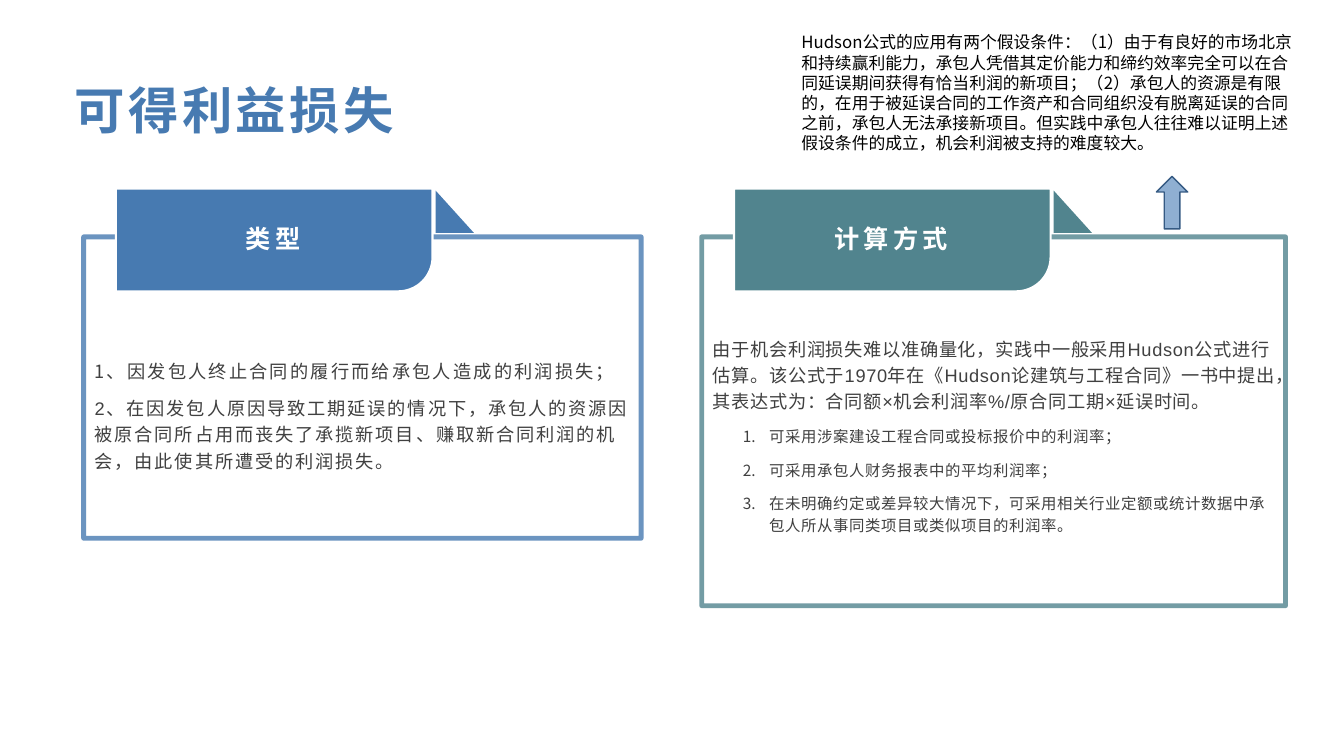
from dataclasses import dataclass
from math import cos, pi, sin

from lxml.etree import SubElement
from pptx import Presentation
from pptx.dml.color import RGBColor
from pptx.enum.shapes import MSO_SHAPE
from pptx.enum.text import MSO_ANCHOR, PP_ALIGN
from pptx.oxml.ns import qn
from pptx.util import Inches, Pt


@dataclass(frozen=True)
class Theme:
    # Colours
    blue: str = "477AB1"
    teal: str = "51848E"
    white: str = "FFFFFF"
    black: str = "000000"
    gray: str = "404040"
    arrow_fill: str = "8FAFD2"
    arrow_line: str = "355A83"
    # Fonts and type sizes
    latin: str = "Arial"
    chinese: str = "Noto Sans CJK SC"
    title: int = 36
    heading: int = 18
    body: int = 13
    note: int = 12
    item: int = 11


@dataclass
class Line:
    """One paragraph of text with its style."""
    text: str
    size: int
    color: str
    font: str
    tracking: float = 0
    bold: bool = False
    align: PP_ALIGN = PP_ALIGN.LEFT
    spacing: float | None = None
    after: float = 0
    numbered: bool = False


def cells(count):
    """Columns and rows are both a tenth of an inch."""
    return Inches(count / 10)


class SlideBuilder:
    def __init__(self, presentation, theme):
        self.theme = theme
        self.slide = presentation.slides.add_slide(presentation.slide_layouts[6])

    def paint(self, shape, fill=None, line=None, width=1, opacity=None):
        shape.shadow.inherit = False
        if fill:
            shape.fill.solid()
            shape.fill.fore_color.rgb = RGBColor.from_string(fill)
        else:
            shape.fill.background()
        if not line:
            shape.line.fill.background()
            return
        shape.line.color.rgb = RGBColor.from_string(line)
        shape.line.width = Pt(width)
        if opacity:
            color = shape.line._ln.find(".//" + qn("a:srgbClr"))
            SubElement(color, qn("a:alpha")).set("val", str(opacity * 1000))

    def shape(self, kind, box, **style):
        shape = self.slide.shapes.add_shape(kind, *map(cells, box))
        self.paint(shape, **style)

    def tab(self, left, top, width, height, radius, color):
        """A banner whose lower right corner is rounded."""
        right, bottom = left + width, top + height
        steps = 24
        arc = [(right - radius + radius * cos(step * pi / 2 / steps),
                bottom - radius + radius * sin(step * pi / 2 / steps))
               for step in range(steps + 1)]
        outline = [(right, top), *arc, (left, bottom)]
        builder = self.slide.shapes.build_freeform(cells(left), cells(top))
        builder.add_line_segments([(cells(x), cells(y)) for x, y in outline])
        self.paint(builder.convert_to_shape(), fill=color,
                   line=self.theme.white, width=1.5)

    def text(self, box, lines, anchor=MSO_ANCHOR.MIDDLE, insets=(1, 0.5)):
        frame = self.slide.shapes.add_textbox(*map(cells, box)).text_frame
        frame.word_wrap = True
        frame.vertical_anchor = anchor
        frame.margin_left = frame.margin_right = cells(insets[0])
        frame.margin_top = frame.margin_bottom = cells(insets[1])
        for index, line in enumerate(lines):
            paragraph = frame.add_paragraph() if index else frame.paragraphs[0]
            self.fill_paragraph(paragraph, line)

    def fill_paragraph(self, paragraph, line):
        if line.numbered:
            properties = paragraph._p.get_or_add_pPr()
            properties.set("marL", str(cells(5.6)))
            properties.set("indent", str(cells(-2.6)))
            SubElement(properties, qn("a:buAutoNum")).set("type", "arabicPeriod")
            paragraph.level = 1
        paragraph.alignment = line.align
        if line.spacing:
            paragraph.line_spacing = line.spacing
        paragraph.space_after = Pt(line.after)
        run = paragraph.add_run()
        run.text = line.text
        run.font.size = Pt(line.size)
        run.font.bold = line.bold
        run.font.name = line.font
        run.font.color.rgb = RGBColor.from_string(line.color)
        properties = run._r.get_or_add_rPr()
        properties.set("spc", str(round(line.tracking * 100)))
        SubElement(properties, qn("a:ea")).set("typeface", self.theme.chinese)

    def panel(self, left, width, height, color, heading, body_top, body_height, lines):
        """A framed text with a folded banner on its upper edge."""
        theme = self.theme
        self.shape(MSO_SHAPE.RECTANGLE, (left, 23.5, width, height),
                   line=color, width=3.5, opacity=80)
        self.tab(left + 3.2, 18.7, 31.4, 10.2, 3.4, color)
        self.shape(MSO_SHAPE.RIGHT_TRIANGLE, (left + 34.9, 18.9, 3.8, 4.2), fill=color)
        self.text((left + 3.1, 18.3, 31.4, 9.8), [
            Line(heading, theme.heading, theme.white, theme.latin, 3, True,
                 PP_ALIGN.CENTER, 1.3)])
        self.text((left + 0.1, body_top, width, body_height), lines)


def main():
    presentation = Presentation()
    presentation.slide_width, presentation.slide_height = Inches(13.33), Inches(7.5)
    theme = Theme()
    builder = SlideBuilder(presentation, theme)

    def body(text, tracking, font=theme.latin, size=theme.body, numbered=False):
        return Line(text, size, theme.gray, font, tracking,
                    spacing=1.2, after=8, numbered=numbered)

    # Title
    builder.text((6.7, 6.7, 120, 8.3), [
        Line("可得利益损失", theme.title, theme.blue, theme.chinese, 2.4, True)],
        insets=(0.7, 0.3))

    # Types of loss
    builder.panel(8.3, 55.3, 29.9, theme.blue, "类型", 28.8, 24.5, [
        body("1、因发包人终止合同的履行而给承包人造成的利润损失；", 1.6, theme.chinese),
        body("2、在因发包人原因导致工期延误的情况下，承包人的资源因被原合同所占用而"
             "丧失了承揽新项目、赚取新合同利润的机会，由此使其所遭受的利润损失。", 1.4),
    ])

    # Way of calculating
    profit_rates = (
        "可采用涉案建设工程合同或投标报价中的利润率；",
        "可采用承包人财务报表中的平均利润率；",
        "在未明确约定或差异较大情况下，可采用相关行业定额或统计数据中承包人所从事"
        "同类项目或类似项目的利润率。",
    )
    builder.panel(69.6, 57.9, 36.6, theme.teal, "计算方式", 26.5, 33.2, [
        body("由于机会利润损失难以准确量化，实践中一般采用Hudson公式进行估算。该公式于"
             "1970年在《Hudson论建筑与工程合同》一书中提出，其表达式为：合同额×机会"
             "利润率%/原合同工期×延误时间。", 0.5),
        *(body(rate, 0.4, size=theme.item, numbered=True) for rate in profit_rates),
    ])

    # Note on the formula, with its arrow
    builder.text((78.5, 2.7, 50.8, 14.2), [
        Line("Hudson公式的应用有两个假设条件：（1）由于有良好的市场北京和持续赢利能力，"
             "承包人凭借其定价能力和缔约效率完全可以在合同延误期间获得有恰当利润的新项目；"
             "（2）承包人的资源是有限的，在用于被延误合同的工作资产和合同组织没有脱离延误"
             "的合同之前，承包人无法承接新项目。但实践中承包人往往难以证明上述假设条件的"
             "成立，机会利润被支持的难度较大。", theme.note, theme.black, theme.chinese)],
        anchor=MSO_ANCHOR.TOP)
    builder.shape(MSO_SHAPE.UP_ARROW, (114.7, 17.5, 3.1, 5.2),
                  fill=theme.arrow_fill, line=theme.arrow_line)

    presentation.save("out.pptx")


if __name__ == "__main__":
    main()
